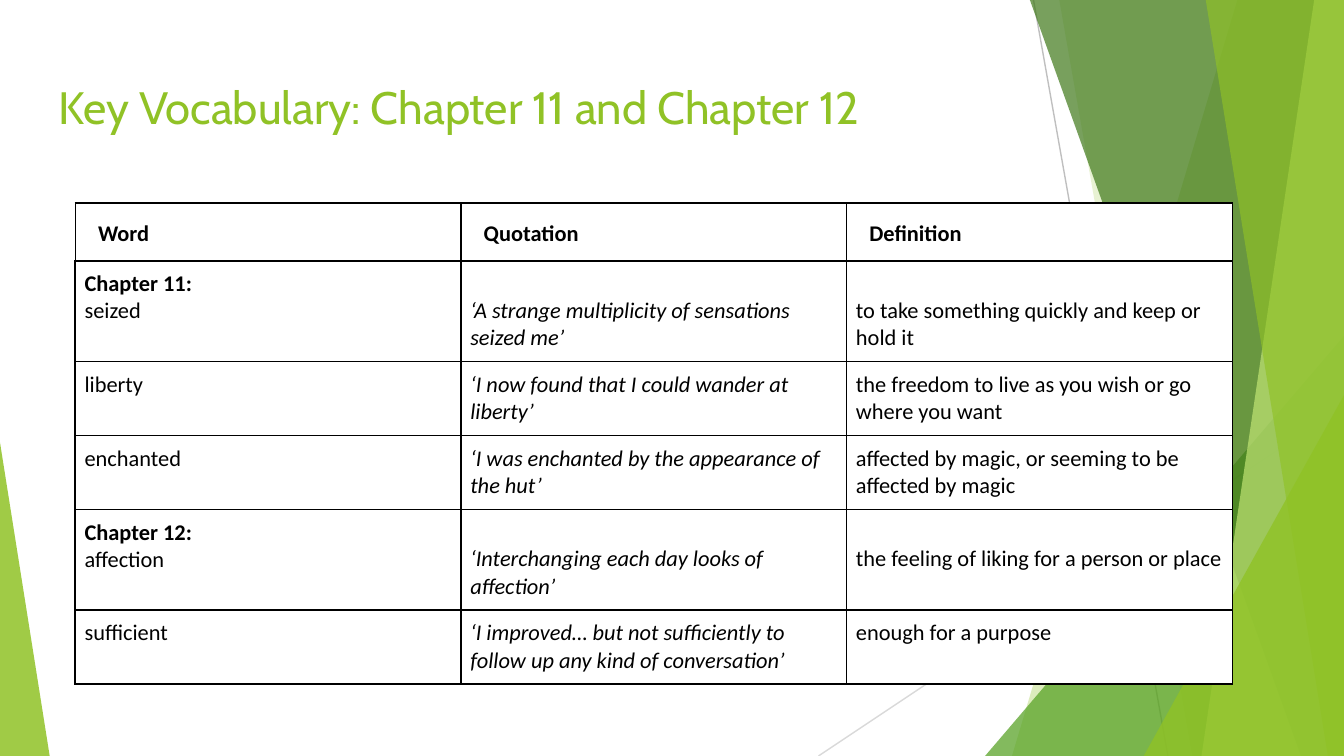
from dataclasses import dataclass

from lxml import etree
from pptx import Presentation
from pptx.dml.color import RGBColor
from pptx.enum.shapes import MSO_CONNECTOR, MSO_SHAPE
from pptx.enum.text import MSO_ANCHOR
from pptx.oxml.ns import qn
from pptx.util import Inches, Pt

STRAIGHT = MSO_CONNECTOR.STRAIGHT
TRIANGLE = MSO_SHAPE.ISOSCELES_TRIANGLE
TOP = MSO_ANCHOR.TOP

WIDTH = 10
HEIGHT = WIDTH * 9 / 16
GREEN, BLACK, WHITE = "90C226", "000000", "FFFFFF"
LINE_HEIGHT = 0.2


@dataclass
class Ray:
    start: tuple[float, float]
    end: tuple[float, float]
    color: str


@dataclass
class Band:
    top_x: float
    bottom_x: float
    color: str
    opacity: int


@dataclass
class Corner:
    left: float
    top: float
    width: float
    apex: float
    color: str
    opacity: int


@dataclass
class Entry:
    word: str
    quotation: str
    definition: str
    height: float
    chapter: str = ""


DECOR = [
    Ray((7.69, 0), (8.69, HEIGHT), "BFBFBF"),
    Ray((10, 3.02), (6.09, HEIGHT), "D9D9D9"),
    Band(9.21, 7.53, GREEN, 30),
    Band(7.88, 8.87, GREEN, 20),
    Corner(7.33, 2.5, 2.67, 1, "54A021", 72),
    Band(7.66, 9.68, "3F7819", 70),
    Band(9.78, 8.94, "C0E474", 70),
    Band(8.97, 9.88, GREEN, 65),
    Corner(8.51, 2.94, 1.49, 1, GREEN, 80),
    Corner(0, 3.29, 0.37, 0, GREEN, 85),
]

HEADINGS = ["Word", "Quotation", "Definition"]
HEADING_HEIGHT = 0.43
ENTRIES = [
    Entry("seized", "‘A strange multiplicity of sensations seized me’",
          "to take something quickly and keep or hold it", 0.75, "Chapter 11:"),
    Entry("liberty", "‘I now found that I could wander at liberty’",
          "the freedom to live as you wish or go where you want", 0.55),
    Entry("enchanted", "‘I was enchanted by the appearance of the hut’",
          "affected by magic, or seeming to be affected by magic", 0.55),
    Entry("affection", "‘Interchanging each day looks of affection’",
          "the feeling of liking for a person or place", 0.75, "Chapter 12:"),
    Entry("sufficient",
          "‘I improved… but not sufficiently to follow up any kind of conversation’",
          "enough for a purpose", 0.55),
]


def rgb(color: str) -> RGBColor:
    return RGBColor.from_string(color)


def paint(sp, color: str, opacity: int) -> None:
    sp.shadow.inherit = False
    sp.line.fill.background()
    sp.fill.solid()
    sp.fill.fore_color.rgb = rgb(color)
    clr = sp._element.spPr.find(qn("a:solidFill")).find(qn("a:srgbClr"))
    etree.SubElement(clr, qn("a:alpha")).set("val", str(opacity * 1000))


def draw_ray(s, ray: Ray) -> None:
    points = [Inches(v) for v in (*ray.start, *ray.end)]
    line = s.shapes.add_connector(STRAIGHT, *points)
    line.line.color.rgb = rgb(ray.color)
    line.line.width = Pt(0.75)
    etree.SubElement(line._element.spPr, qn("a:effectLst"))


def draw_band(s, band: Band) -> None:
    top, right, bottom = Inches(-0.01), Inches(WIDTH), Inches(HEIGHT)
    outline = s.shapes.build_freeform(Inches(band.top_x), top)
    outline.add_line_segments(
        [(right, top), (right, bottom), (Inches(band.bottom_x), bottom)], close=True)
    paint(outline.convert_to_shape(), band.color, band.opacity)


def draw_corner(s, corner: Corner) -> None:
    sp = s.shapes.add_shape(TRIANGLE, Inches(corner.left), Inches(corner.top),
                            Inches(corner.width), Inches(HEIGHT - corner.top))
    sp.adjustments[0] = corner.apex
    paint(sp, corner.color, corner.opacity)


def draw_title(s, text: str) -> None:
    sp = s.shapes.add_textbox(Inches(0.34), Inches(0.49), Inches(9.32), Inches(0.63))
    tf = sp.text_frame
    tf.word_wrap = True
    tf.vertical_anchor = TOP
    tf.margin_left = tf.margin_right = tf.margin_top = tf.margin_bottom = Inches(0.1)
    p = tf.paragraphs[0]
    p.text = text
    p.font.name, p.font.size = "Cabin", Pt(24.3)
    p.font.color.rgb = rgb(GREEN)


def style_cell(cell, margin: float, border: float) -> None:
    cell.margin_left = cell.margin_right = Inches(margin)
    cell.margin_top = cell.margin_bottom = Inches(margin)
    tc_pr = cell._tc.get_or_add_tcPr()
    for side in ("a:lnL", "a:lnR", "a:lnT", "a:lnB"):
        ln = etree.SubElement(tc_pr, qn(side), w=str(Pt(border)))
        fill = etree.SubElement(ln, qn("a:solidFill"))
        etree.SubElement(fill, qn("a:srgbClr"), val=BLACK)
    cell.fill.solid()
    cell.fill.fore_color.rgb = rgb(WHITE)


def write(p, text: str, bold: bool = False, italic: bool = False) -> None:
    p.text = text
    p.font.name, p.font.size = "Calibri", Pt(12)
    p.font.bold, p.font.italic = bold, italic
    p.font.color.rgb = rgb(BLACK)


def fill_heading(cell, text: str) -> None:
    style_cell(cell, 0.1, 0.75)
    cell.margin_left = Inches(0.17)
    p = cell.text_frame.paragraphs[0]
    write(p, text, bold=True)
    p.line_spacing = 1.15


def fill_entry(cells, entry: Entry) -> None:
    for col, text in enumerate((entry.word, entry.quotation, entry.definition)):
        cell = cells[col]
        style_cell(cell, 0.07, 1)
        tf = cell.text_frame
        p = tf.paragraphs[0]
        if entry.chapter and col == 0:
            write(p, entry.chapter, bold=True)
            p = tf.add_paragraph()
        elif entry.chapter:
            cell.margin_top = Inches(0.07 + LINE_HEIGHT)
        write(p, text, italic=col == 1)


def draw_table(s) -> None:
    heights = [HEADING_HEIGHT, *(entry.height for entry in ENTRIES)]
    frame = s.shapes.add_table(len(heights), len(HEADINGS), Inches(0.56), Inches(1.51),
                               Inches(8.61), Inches(sum(heights)))
    table = frame.table
    table.first_row = table.horz_banding = False
    for row, height in zip(table.rows, heights):
        row.height = Inches(height)
    for col, heading in enumerate(HEADINGS):
        fill_heading(table.cell(0, col), heading)
    for row, entry in enumerate(ENTRIES, 1):
        fill_entry(table.rows[row].cells, entry)


def main() -> None:
    prs = Presentation()
    prs.slide_width, prs.slide_height = Inches(WIDTH), Inches(HEIGHT)
    s = prs.slides.add_slide(prs.slide_layouts[6])
    draw = {Ray: draw_ray, Band: draw_band, Corner: draw_corner}
    for item in DECOR:
        draw[type(item)](s, item)
    draw_title(s, "Key Vocabulary: Chapter 11 and Chapter 12")
    draw_table(s)
    prs.save("out.pptx")


if __name__ == "__main__":
    main()
